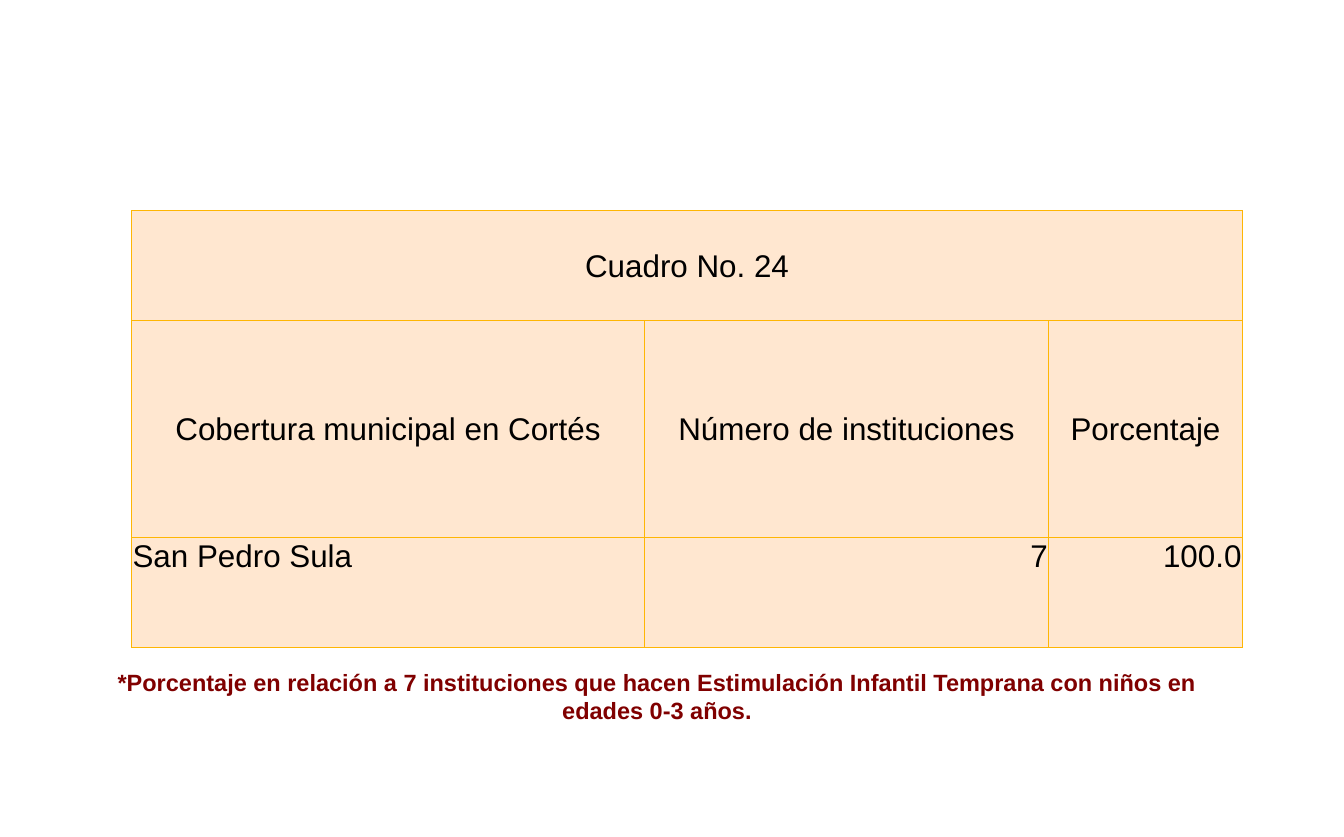
from lxml import etree
from pptx import Presentation
from pptx.dml.color import RGBColor
from pptx.enum.text import MSO_ANCHOR, MSO_AUTO_SIZE, PP_ALIGN
from pptx.oxml.ns import qn
from pptx.util import Inches, Pt

LEFT, CENTER, RIGHT = PP_ALIGN.LEFT, PP_ALIGN.CENTER, PP_ALIGN.RIGHT
TOP, MIDDLE = MSO_ANCHOR.TOP, MSO_ANCHOR.MIDDLE
GROW = MSO_AUTO_SIZE.SHAPE_TO_FIT_TEXT

FONT = "Arial"
BLACK, MAROON, PEACH, AMBER = "000000", "800000", "FFE7D0", "FEB604"

COLUMN_WIDTHS = [5.45, 4.3, 2.06]
ROW_HEIGHTS = [1.17, 2.31, 1.17]
ROWS = [
    ["Cuadro No. 24", "", ""],
    ["Cobertura municipal en Cortés", "Número de instituciones", "Porcentaje"],
    ["San Pedro Sula", "7", "100.0"],
]
NOTE = ("*Porcentaje en relación a 7 instituciones que hacen Estimulación "
        "Infantil Temprana con niños en edades 0-3 años.")


def color(value):
    return RGBColor.from_string(value)


def write(frame, text, size=24, fill=BLACK, bold=False, align=LEFT):
    para = frame.paragraphs[0]
    para.alignment = align
    span = para.add_run()
    span.text = text
    font = span.font
    font.name, font.size, font.bold = FONT, Pt(size), bold
    font.color.rgb = color(fill)


def set_borders(cell, line_color, width):
    properties = cell._tc.get_or_add_tcPr()
    for side in ("a:lnL", "a:lnR", "a:lnT", "a:lnB"):
        line = etree.SubElement(properties, qn(side), w=str(Pt(width)))
        fill = etree.SubElement(line, qn("a:solidFill"))
        etree.SubElement(fill, qn("a:srgbClr"), val=line_color)


def style_cell(cell, anchor):
    cell.margin_left = cell.margin_right = cell.margin_top = Inches(0.01)
    cell.margin_bottom = 0
    cell.vertical_anchor = anchor
    set_borders(cell, AMBER, 0.75)
    cell.fill.solid()
    cell.fill.fore_color.rgb = color(PEACH)


def add_coverage_table(page, left, top):
    table = page.shapes.add_table(
        len(ROW_HEIGHTS), len(COLUMN_WIDTHS), Inches(left), Inches(top),
        Inches(sum(COLUMN_WIDTHS)), Inches(sum(ROW_HEIGHTS))).table
    for column, width in zip(table.columns, COLUMN_WIDTHS):
        column.width = Inches(width)
    for row, height in zip(table.rows, ROW_HEIGHTS):
        row.height = Inches(height)

    # Title row spans all columns
    table.cell(0, 0).merge(table.cell(0, len(COLUMN_WIDTHS) - 1))

    # Headings are centred, figures are right-aligned
    for r, texts in enumerate(ROWS):
        is_data = r == len(ROWS) - 1
        for c, text in enumerate(texts):
            cell = table.cell(r, c)
            style_cell(cell, TOP if is_data else MIDDLE)
            if text:
                align = CENTER if not is_data else RIGHT if c else LEFT
                write(cell.text_frame, text, align=align)


def add_note(page, left, top, width, height):
    box = page.shapes.add_textbox(
        Inches(left), Inches(top), Inches(width), Inches(height))
    frame = box.text_frame
    frame.word_wrap = True
    frame.auto_size = GROW
    write(frame, NOTE, size=18, fill=MAROON, bold=True, align=CENTER)


def main():
    deck = Presentation()
    deck.slide_width, deck.slide_height = Inches(14.29), Inches(8.9)
    page = deck.slides.add_slide(deck.slide_layouts[6])
    add_coverage_table(page, 1.4, 2.24)
    add_note(page, 1.08, 7.05, 11.81, 0.71)
    deck.save("out.pptx")


if __name__ == "__main__":
    main()
